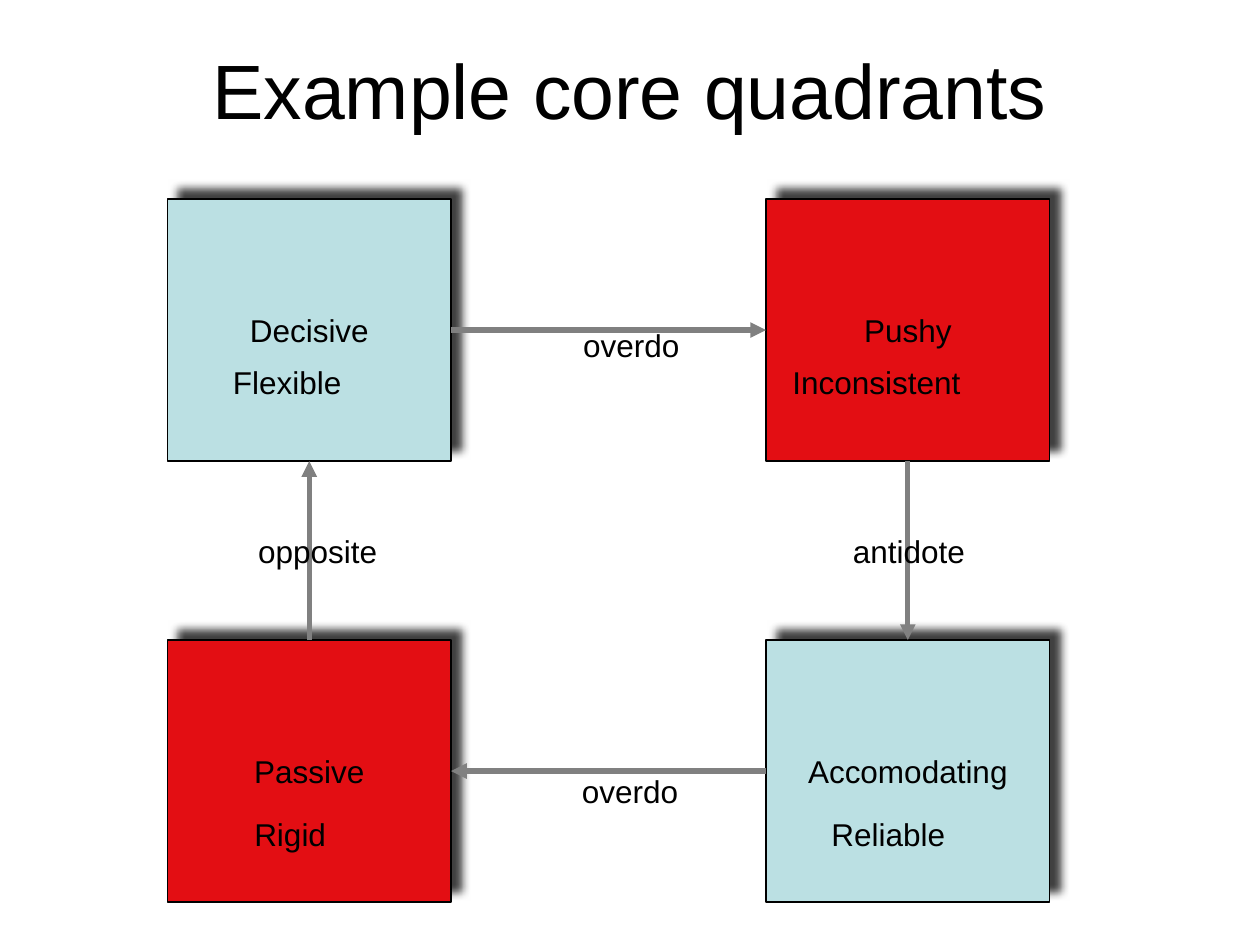
from lxml.etree import SubElement
from pptx import Presentation
from pptx.dml.color import RGBColor
from pptx.enum.shapes import MSO_CONNECTOR as CONNECTOR, MSO_SHAPE as SHAPE
from pptx.enum.text import MSO_ANCHOR as ANCHOR, PP_ALIGN as ALIGN
from pptx.oxml.ns import qn
from pptx.util import Inches, Pt

BLACK = RGBColor(0x00, 0x00, 0x00)
GREY = RGBColor(0x80, 0x80, 0x80)
PALE_BLUE = RGBColor(0xBB, 0xE0, 0xE3)
RED = RGBColor(0xE3, 0x0E, 0x13)

COLUMNS = (1.33, 6.08)
ROWS = (1.58, 5.08)
BOX_WIDTH, BOX_HEIGHT = 2.25, 2.08
TOP, LEFT, BOTTOM, RIGHT = range(4)

# name: column, row, fill, first trait, second trait, its left, top and width
QUADRANTS = {
    "quality": (0, 0, PALE_BLUE, "Decisive", "Flexible", 1.75, 2.83, 1.35),
    "allergy": (0, 1, RED, "Passive", "Rigid", 1.92, 6.42, 0.96),
    "challenge": (1, 1, PALE_BLUE, "Accomodating", "Reliable", 6.5, 6.42, 1.41),
    "pitfall": (1, 0, RED, "Pushy", "Inconsistent", 6.19, 2.83, 1.98),
}
# start, side, end, side, label, its left, top and width
RELATIONS = [
    ("quality", RIGHT, "pitfall", LEFT, "overdo", 4.53, 2.54, 0.97),
    ("allergy", TOP, "quality", BOTTOM, "opposite", 1.95, 4.17, 1.15),
    ("challenge", LEFT, "allergy", RIGHT, "overdo", 4.52, 6.08, 0.97),
    ("pitfall", BOTTOM, "challenge", TOP, "antidote", 6.67, 4.17, 1.09),
]


def write(frame, text, size=18, align=ALIGN.LEFT, wrap=False):
    frame.text = text
    frame.word_wrap = wrap
    paragraph = frame.paragraphs[0]
    paragraph.alignment = align
    font = paragraph.runs[0].font
    font.name, font.size = "Arial", Pt(size)
    font.color.rgb = BLACK


def add_title(slide, text):
    title = slide.shapes.title
    title.left, title.top = Inches(0.75), Inches(0.08)
    title.width, title.height = Inches(8.5), Inches(1.25)
    title.text_frame.vertical_anchor = ANCHOR.MIDDLE
    write(title.text_frame, text, 44, ALIGN.CENTER, wrap=True)


def cast_shadow(shape):
    """Give the shape a soft black shadow to the upper right."""
    shape.shadow.inherit = False
    effects = shape._element.spPr.find(qn("a:effectLst"))
    shadow = SubElement(effects, qn("a:outerShdw"), blurRad=str(Pt(5)),
                        dist=str(Pt(8.5)), dir=str(315 * 60000),
                        algn="ctr", rotWithShape="0")
    color = SubElement(shadow, qn("a:srgbClr"), val=str(BLACK))
    SubElement(color, qn("a:alpha"), val="75000")


def add_quadrant(slide, column, row, fill, trait):
    box = slide.shapes.add_shape(
        SHAPE.RECTANGLE, Inches(COLUMNS[column]), Inches(ROWS[row]),
        Inches(BOX_WIDTH), Inches(BOX_HEIGHT))
    box.fill.solid()
    box.fill.fore_color.rgb = fill
    box.line.color.rgb = BLACK
    box.line.width = Pt(0.75)
    cast_shadow(box)
    box.text_frame.vertical_anchor = ANCHOR.MIDDLE
    write(box.text_frame, trait, align=ALIGN.CENTER)
    return box


def add_arrow(slide, start, start_side, end, end_side):
    arrow = slide.shapes.add_connector(CONNECTOR.STRAIGHT, 0, 0, 0, 0)
    arrow.begin_connect(start, start_side)
    arrow.end_connect(end, end_side)
    arrow.line.color.rgb = GREY
    arrow.line.width = Pt(3)
    SubElement(arrow.line._get_or_add_ln(), qn("a:tailEnd"), type="triangle")
    SubElement(arrow._element.spPr, qn("a:effectLst"))


def add_label(slide, text, left, top, width, height=0.4, wrap=False):
    label = slide.shapes.add_textbox(
        Inches(left), Inches(top), Inches(width), Inches(height))
    write(label.text_frame, text, wrap=wrap)


def main():
    deck = Presentation()
    deck.slide_width, deck.slide_height = Inches(10), Inches(7.5)
    slide = deck.slides.add_slide(deck.slide_layouts[5])
    add_title(slide, "Example core quadrants")

    boxes = {name: add_quadrant(slide, *quadrant[:4])
             for name, quadrant in QUADRANTS.items()}
    for start, start_side, end, end_side, *label in RELATIONS:
        add_arrow(slide, boxes[start], start_side, boxes[end], end_side)
        add_label(slide, *label)
    for quadrant in QUADRANTS.values():
        add_label(slide, *quadrant[4:], height=0.5, wrap=True)

    deck.save("out.pptx")


if __name__ == "__main__":
    main()
